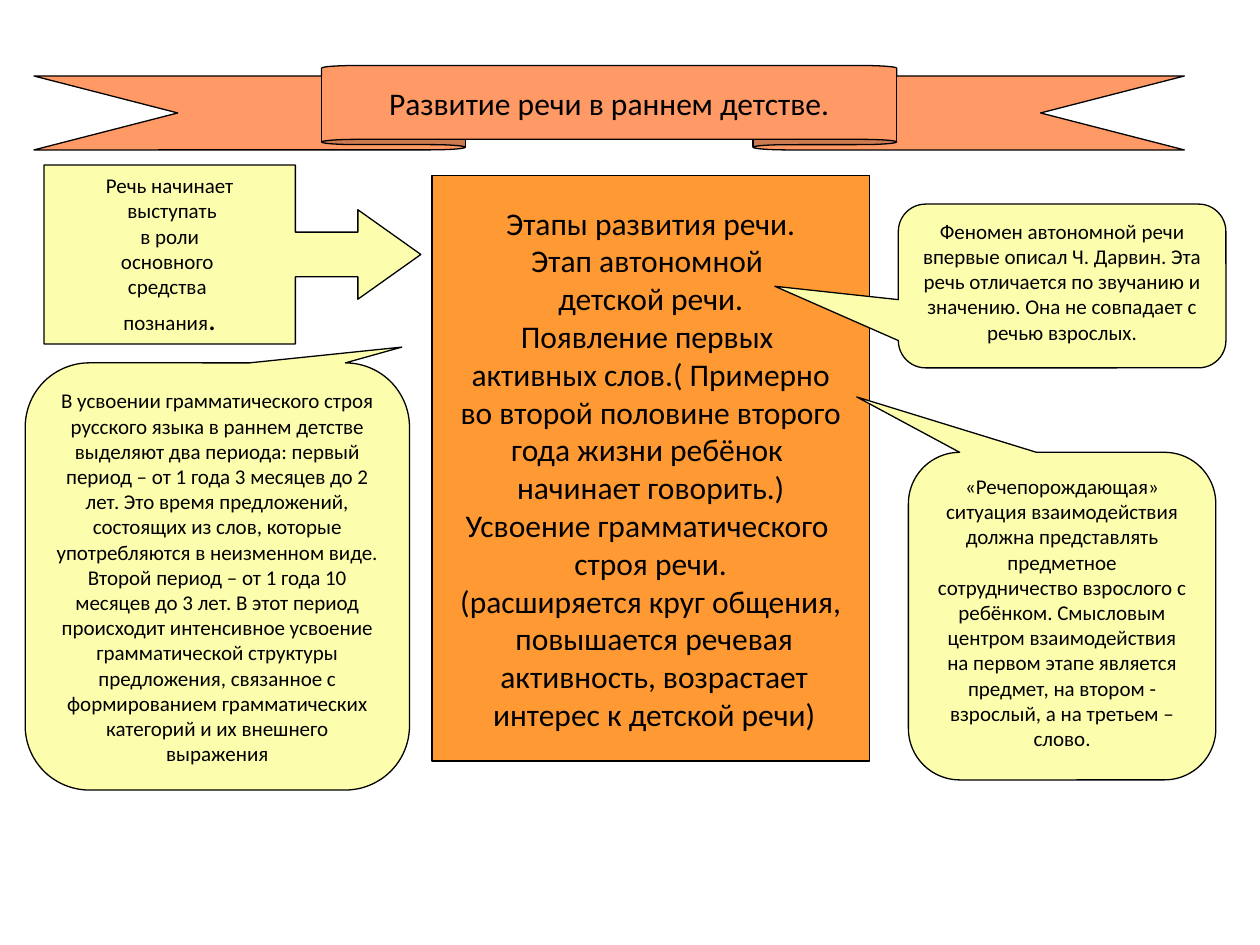
from dataclasses import dataclass

from pptx import Presentation
from pptx.dml.color import RGBColor
from pptx.enum.shapes import MSO_SHAPE as Shape
from pptx.enum.text import MSO_ANCHOR as Anchor, PP_ALIGN as Align
from pptx.util import Inches, Pt


@dataclass(frozen=True)
class Theme:
    font: str = "Calibri"
    ink: str = "000000"
    ribbon: str = "FF9966"
    stages: str = "FF9933"
    note: str = "FCFEAE"
    large: int = 18
    small: int = 12
    outline: float = 0.75


THEME = Theme()
CORNER = 0.167  # corner rounding of every speech bubble

TITLE = "Развитие речи в раннем детстве."
ROLE = ["Речь начинает", " выступать", " в роли ", "основного ", "средства ", "познания"]
STAGES = [
    "Этапы развития речи.",
    "Этап автономной ",
    "детской речи.",
    "Появление первых ",
    "активных слов.( Примерно",
    " во второй половине второго ",
    "года жизни ребёнок ",
    "начинает говорить.)",
    "Усвоение грамматического ",
    "строя речи.",
    "(расширяется круг общения,",
    " повышается речевая",
    " активность, возрастает",
    " интерес к детской речи)",
]
GRAMMAR = [
    "В усвоении грамматического строя русского языка в раннем детстве выделяют "
    "два периода: первый период – от 1 года 3 месяцев до 2 лет. Это время "
    "предложений, состоящих из слов, которые употребляются в неизменном виде.",
    "Второй период – от 1 года 10 месяцев до 3 лет. В этот период происходит "
    "интенсивное усвоение грамматической структуры предложения, связанное с "
    "формированием грамматических категорий и их внешнего выражения",
]
AUTONOMOUS = [
    "Феномен автономной речи впервые описал Ч. Дарвин. Эта речь отличается по "
    "звучанию и значению. Она не совпадает с речью взрослых.",
]
SITUATION = [
    "«Речепорождающая»",
    "ситуация взаимодействия должна представлять предметное сотрудничество "
    "взрослого с ребёнком. Смысловым центром взаимодействия на первом этапе "
    "является предмет, на втором - взрослый, а на третьем – слово.",
]


def add_run(paragraph, text, size):
    run = paragraph.add_run()
    run.text = text
    run.font.name = THEME.font
    run.font.size = Pt(size)
    run.font.color.rgb = RGBColor.from_string(THEME.ink)


def write_lines(shape, lines, size, anchor=Anchor.MIDDLE, wrap=False):
    frame = shape.text_frame
    frame.word_wrap = wrap
    frame.vertical_anchor = anchor
    for index, line in enumerate(lines):
        paragraph = frame.add_paragraph() if index else frame.paragraphs[0]
        paragraph.alignment = Align.CENTER
        add_run(paragraph, line, size)


def add_panel(slide, kind, box, fill, adjustments=()):
    panel = slide.shapes.add_shape(kind, *map(Inches, box))
    panel.shadow.inherit = False
    panel.fill.solid()
    panel.fill.fore_color.rgb = RGBColor.from_string(fill)
    panel.line.color.rgb = RGBColor.from_string(THEME.ink)
    panel.line.width = Pt(THEME.outline)
    for index, value in enumerate(adjustments):
        panel.adjustments[index] = value
    return panel


def add_bubble(slide, box, tip, lines):
    """Speech bubble; tip is its offset from the centre in widths and heights."""
    bubble = add_panel(slide, Shape.ROUNDED_RECTANGULAR_CALLOUT, box, THEME.note,
                       (*tip, CORNER))
    write_lines(bubble, lines, THEME.small, Anchor.TOP, wrap=True)


def add_title_ribbon(slide):
    left, top, width, height = 0.27, 0.52, 9.13, 0.67
    fold, panel_share = 0.125, 0.5
    ribbon = add_panel(slide, Shape.UP_RIBBON, (left, top, width, height),
                       THEME.ribbon, (fold, panel_share))
    # The title fills the front panel of the ribbon
    title = slide.shapes.title
    title.left = Inches(left + width * (1 - panel_share) / 2)
    title.top = Inches(top)
    title.width = Inches(width * panel_share)
    title.height = Inches(height * (1 - fold))
    write_lines(title, [TITLE], THEME.large)
    ribbon.element.addnext(title.element)


def main():
    deck = Presentation()
    deck.slide_width, deck.slide_height = Inches(10), Inches(7.5)
    slide = deck.slides.add_slide(deck.slide_layouts[5])

    add_title_ribbon(slide)

    # Role of speech, pointing at the stages
    role = add_panel(slide, Shape.RIGHT_ARROW_CALLOUT, (0.35, 1.31, 2.99, 1.42),
                     THEME.note, (0.25, 0.25, 0.352, 0.667))
    write_lines(role, ROLE, THEME.small)
    add_run(role.text_frame.paragraphs[-1], ".", THEME.large)

    # Stages of speech development
    stages = add_panel(slide, Shape.RECTANGLE, (3.43, 1.39, 3.47, 4.65), THEME.stages)
    write_lines(stages, STAGES, THEME.large)

    # Comments on the stages
    add_bubble(slide, (0.2, 2.88, 3.05, 3.39), (0.48, -0.537), GRAMMAR)
    add_bubble(slide, (7.13, 1.62, 2.6, 1.3), (-0.877, 0.002), AUTONOMOUS)
    add_bubble(slide, (7.21, 3.59, 2.44, 2.6), (-0.668, -0.669), SITUATION)

    deck.save("out.pptx")


if __name__ == "__main__":
    main()
